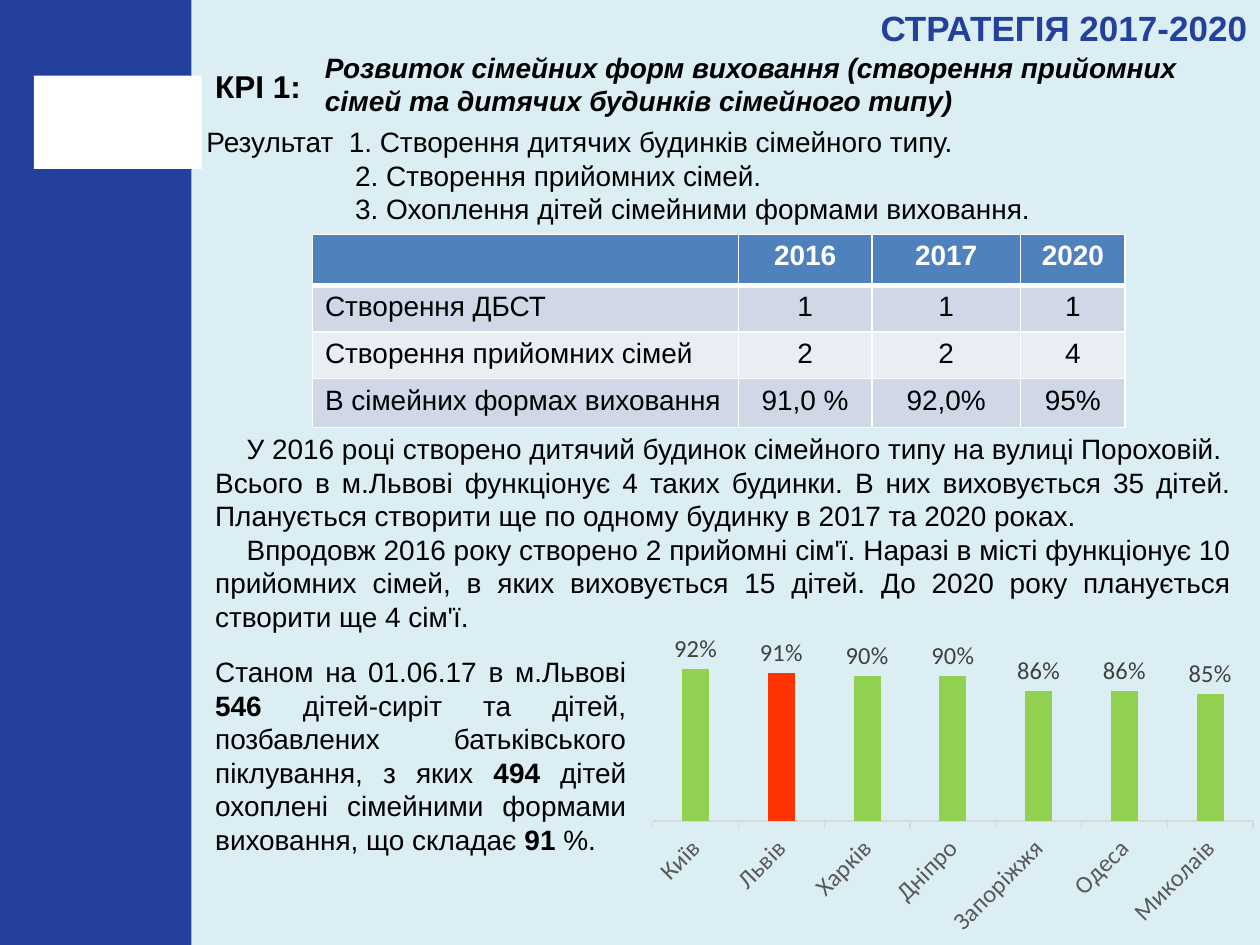
from dataclasses import dataclass

from lxml import etree
from pptx import Presentation
from pptx import util as u
from pptx.chart.data import CategoryChartData
from pptx.dml.color import RGBColor
from pptx.enum import chart as charts, shapes, text
from pptx.oxml import parse_xml
from pptx.oxml.ns import nsdecls, qn

COLORS = {
    "page": "DBEEF4", "brand": "23409D", "white": "FFFFFF", "black": "000000",
    "header": "4F81BD", "odd": "D0D8E8", "even": "E9EDF4",
    "bar": "92D050", "highlight": "FF3300",
    "axis": "D9D9D9", "category": "595959", "value": "404040",
}
WIDTH, HEIGHT = u.Inches(10), u.Inches(7.5)
COLUMNS, ROWS = 100, 75
LEFT, CENTER, RIGHT, JUSTIFY = (text.PP_ALIGN.LEFT, text.PP_ALIGN.CENTER,
                                text.PP_ALIGN.RIGHT, text.PP_ALIGN.JUSTIFY)


@dataclass(frozen=True)
class Area:
    """A place on the page, in grid columns and rows."""
    left: float
    top: float
    width: float
    height: float

    def lengths(self) -> tuple:
        return cols(self.left), rows(self.top), cols(self.width), rows(self.height)


@dataclass(frozen=True)
class Span:
    text: str
    bold: bool = False
    italic: bool = False


@dataclass(frozen=True)
class Para:
    spans: tuple
    align: text.PP_ALIGN = LEFT
    margin: float = 0
    indent: float = 0


@dataclass(frozen=True)
class Block:
    area: Area
    paras: tuple
    size: float = 16
    anchor: text.MSO_ANCHOR = text.MSO_ANCHOR.MIDDLE
    color: str = "black"


def cols(count: float) -> int:
    return round(WIDTH * count / COLUMNS)


def rows(count: float) -> int:
    return round(HEIGHT * count / ROWS)


def rgb(name: str) -> RGBColor:
    return RGBColor.from_string(COLORS[name])


def style(font, size: float, color: str, face: str = "Arial") -> None:
    font.name, font.size = face, u.Pt(size)
    font.color.rgb = rgb(color)


def write(frame, paras: tuple, size: float, color: str) -> None:
    for number, para in enumerate(paras):
        target = frame.add_paragraph() if number else frame.paragraphs[0]
        target.alignment = para.align
        properties = target._p.get_or_add_pPr()
        properties.set("marL", str(cols(para.margin)))
        properties.set("indent", str(cols(para.indent)))
        for span in para.spans:
            run = target.add_run()
            run.text = span.text
            style(run.font, size, color)
            run.font.bold, run.font.italic = span.bold, span.italic


def fill_box(box, block: Block) -> None:
    box.left, box.top, box.width, box.height = block.area.lengths()
    frame = box.text_frame
    frame.word_wrap = True
    frame.auto_size = text.MSO_AUTO_SIZE.NONE
    frame.vertical_anchor = block.anchor
    write(frame, block.paras, block.size, block.color)


def add_panel(page, area: Area, color: str) -> None:
    panel = page.shapes.add_shape(shapes.MSO_SHAPE.RECTANGLE, *area.lengths())
    panel.shadow.inherit = False
    panel.fill.solid()
    panel.fill.fore_color.rgb = rgb(color)
    panel.line.fill.background()


def add_borders(cell, bottom: float) -> None:
    properties = cell._tc.get_or_add_tcPr()
    for index, (side, width) in enumerate(
            (("L", 1), ("R", 1), ("T", 1), ("B", bottom))):
        properties.insert(index, parse_xml(
            f'<a:ln{side} {nsdecls("a")} w="{u.Pt(width)}"><a:solidFill>'
            f'<a:srgbClr val="{COLORS["white"]}"/></a:solidFill></a:ln{side}>'))


def add_targets(page, area: Area, widths: tuple, heights: tuple, records: tuple) -> None:
    table = page.shapes.add_table(len(records), len(widths), *area.lengths()).table
    for column, width in zip(table.columns, widths):
        column.width = cols(width)
    for row, height in zip(table.rows, heights):
        row.height = rows(height)
    for r, record in enumerate(records):
        for c, value in enumerate(record):
            cell, header = table.cell(r, c), r == 0
            cell.fill.solid()
            cell.fill.fore_color.rgb = rgb(
                "header" if header else "odd" if r % 2 else "even")
            add_borders(cell, 3 if header else 1)
            if value:
                para = Para((Span(value, header),), CENTER if c else LEFT)
                write(cell.text_frame, (para,), 16, "white" if header else "black")


def place_plot(chart, x: float, y: float, w: float, h: float) -> None:
    """Fix the inner plot area as shares of the chart."""
    plot_area = chart._chartSpace.chart.plotArea
    for old in plot_area.findall(qn("c:layout")):
        plot_area.remove(old)
    layout = etree.Element(qn("c:layout"))
    manual = etree.SubElement(layout, qn("c:manualLayout"))
    for tag, value in (("layoutTarget", "inner"), ("xMode", "edge"),
                       ("yMode", "edge"), ("x", x), ("y", y), ("w", w), ("h", h)):
        etree.SubElement(manual, qn(f"c:{tag}")).set("val", str(value))
    plot_area.insert(0, layout)


def add_city_chart(page, area: Area, shares: dict, highlight: str) -> None:
    data = CategoryChartData(number_format="0%")
    data.categories = list(shares)
    data.add_series("Series 1", list(shares.values()))
    chart = page.shapes.add_chart(
        charts.XL_CHART_TYPE.COLUMN_CLUSTERED, *area.lengths(), data).chart
    chart.has_legend = chart.has_title = False
    style(chart.font, 14, "black", "Calibri")

    plot = chart.plots[0]
    plot.gap_width, plot.overlap, plot.vary_by_categories = 219, -27, False
    series = plot.series[0]
    for part, color in ((series, "bar"),
                        (series.points[list(shares).index(highlight)], "highlight")):
        part.format.fill.solid()
        part.format.fill.fore_color.rgb = rgb(color)
    labels = series.data_labels
    labels.show_value = True
    labels.position = charts.XL_LABEL_POSITION.OUTSIDE_END
    labels.number_format, labels.number_format_is_linked = "0%", False
    style(labels.font, 14, "value", "Calibri")

    values = chart.value_axis
    values.visible = values.has_major_gridlines = False
    values.minimum_scale, values.maximum_scale, values.major_unit = 0.5, 1, 0.5
    cities = chart.category_axis
    cities.major_tick_mark = charts.XL_TICK_MARK.OUTSIDE
    cities.format.line.color.rgb = rgb("axis")
    cities.format.line.width = u.Pt(0.75)
    style(cities.tick_labels.font, 14, "category", "Calibri")
    cities._element.find(qn("c:txPr")).find(qn("a:bodyPr")).set("rot", str(-45 * 60000))
    place_plot(chart, 0.05, 0.06, 0.95, 0.57)


TITLE = Block(Area(39.1, 0, 60.9, 4.4),
              (Para((Span("СТРАТЕГІЯ 2017-2020", True),), RIGHT),), 20, color="brand")
BLOCKS = (
    Block(Area(15.4, 9.2, 82.2, 9.4), (
        Para((Span("Результат\t1. Створення дитячих будинків сімейного типу."),),
             margin=11.3, indent=-11.3),
        Para((Span("2. Створення прийомних сімей."),), margin=11.8),
        Para((Span("3. Охоплення дітей сімейними формами виховання."),), margin=11.8))),
    Block(Area(16.1, 34.4, 82.6, 15.7), (
        Para((Span("У 2016 році створено дитячий будинок сімейного типу на вулиці "
                   "Пороховій."),), JUSTIFY, indent=2.5),
        Para((Span("Всього в м.Львові функціонує 4 таких будинки. В них виховується "
                   "35 дітей. Планується створити ще по одному будинку в 2017 та "
                   "2020 роках."),), JUSTIFY),
        Para((Span("Впродовж 2016 року створено 2 прийомні сім'ї. Наразі в місті "
                   "функціонує 10 прийомних сімей, в яких виховується 15 дітей. До "
                   "2020 року планується створити ще 4 сім'ї."),), JUSTIFY, indent=2.5))),
    Block(Area(16.1, 2.9, 80.6, 7.9), (Para((Span("КРІ 1:", True),)),), 18),
    Block(Area(24.8, 3.5, 73.9, 6.4), (
        Para((Span("Розвиток сімейних форм виховання (створення прийомних сімей "
                   "та дитячих будинків сімейного типу)", True, True),)),),
        anchor=text.MSO_ANCHOR.TOP),
    Block(Area(16.1, 50.1, 34.6, 19.7), (
        Para((Span("Станом на 01.06.17 в м.Львові "), Span("546", True),
              Span(" дітей-сиріт та дітей, позбавлених батьківського піклування, з яких "),
              Span("494", True),
              Span(" дітей охоплені сімейними формами виховання, що складає "),
              Span("91 ", True), Span("%.")), JUSTIFY),)),
)
TARGETS = (
    ("", "2016", "2017", "2020"),
    ("Створення ДБСТ", "1", "1", "1"),
    ("Створення прийомних сімей", "2", "2", "4"),
    ("В сімейних формах виховання", "91,0 %", "92,0%", "95%"),
)
CITY_SHARES = {"Київ": 0.92, "Львів": 0.91, "Харків": 0.9, "Дніпро": 0.9,
               "Запоріжжя": 0.86, "Одеса": 0.86, "Миколаів": 0.85}


def main() -> None:
    deck = Presentation()
    deck.slide_width, deck.slide_height = WIDTH, HEIGHT
    page = deck.slides.add_slide(deck.slide_layouts.get_by_name("Title Only"))
    page.background.fill.solid()
    page.background.fill.fore_color.rgb = rgb("page")
    add_panel(page, Area(0, 0, 15.2, ROWS), "brand")
    add_panel(page, Area(2.7, 6, 13.3, 7.4), "white")
    fill_box(page.shapes.title, TITLE)
    for block in BLOCKS:
        fill_box(page.shapes.add_textbox(*block.area.lengths()), block)
    add_targets(page, Area(24.8, 18.6, 64.5, 14.9), (33.8, 10.6, 11.8, 8.3),
                (3.6, 3.7, 3.7, 3.9), TARGETS)
    add_city_chart(page, Area(49.3, 49.3, 50.2, 25.2), CITY_SHARES, "Львів")
    deck.save("out.pptx")


if __name__ == "__main__":
    main()
